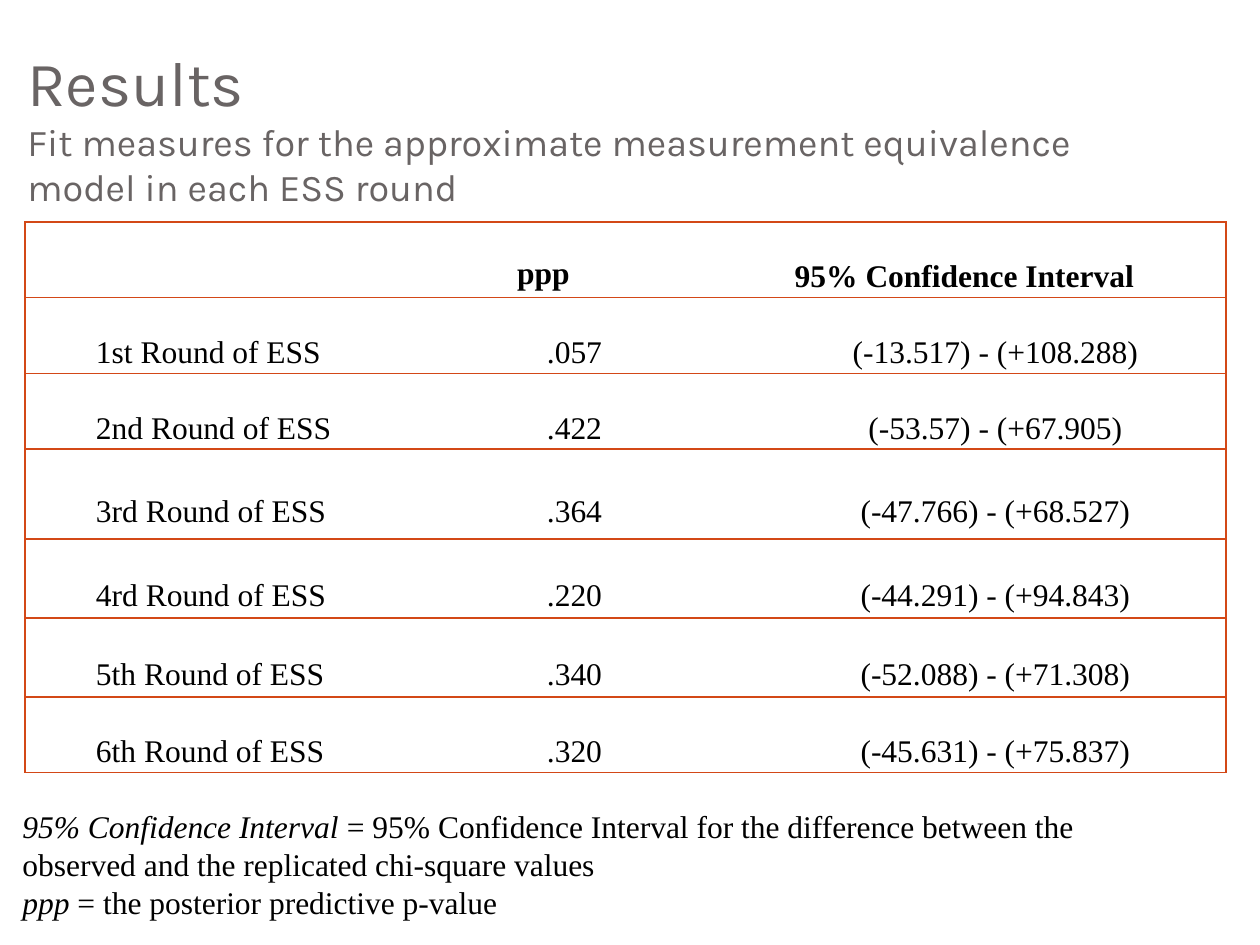
import pptx
import pptx.dml.color
import pptx.enum.text
import pptx.oxml.ns
import pptx.util
from lxml import etree

PX = 914400 / 126
BLACK = pptx.dml.color.RGBColor(0x00, 0x00, 0x00)
WHITE = pptx.dml.color.RGBColor(0xFF, 0xFF, 0xFF)
GREY = pptx.dml.color.RGBColor(0x69, 0x64, 0x64)
ORANGE = pptx.dml.color.RGBColor(0xD3, 0x48, 0x17)
SERIF = "Times New Roman"
CENTER = pptx.enum.text.PP_ALIGN.CENTER
LEFT = pptx.enum.text.PP_ALIGN.LEFT

HEADER = ("", "ppp", "95% Confidence Interval")
ROUNDS = [
    ("1st Round of ESS", ".057", "(-13.517) - (+108.288)"),
    ("2nd Round of ESS", ".422", "(-53.57) - (+67.905)"),
    ("3rd Round of ESS", ".364", "(-47.766) - (+68.527)"),
    ("4rd Round of ESS", ".220", "(-44.291) - (+94.843)"),
    ("5th Round of ESS", ".340", "(-52.088) - (+71.308)"),
    ("6th Round of ESS", ".320", "(-45.631) - (+75.837)"),
]
COLUMN_WIDTHS = (359, 319, 523)
ROW_HEIGHTS = (73, 73, 73, 90, 79, 79, 73)
NOTES = [
    ("95% Confidence Interval ",
     "= 95% Confidence Interval for the difference between the observed "
     "and the replicated chi-square values"),
    ("ppp ", "= the posterior predictive p-value"),
]


def px(length):
    return pptx.util.Emu(round(length * PX))


def style_font(font, name, size, color, bold=False):
    font.name = name
    font.size = pptx.util.Pt(size)
    font.color.rgb = color
    font.bold = bold


def add_text_frame(page, left, top, width, height):
    box = page.shapes.add_textbox(px(left), px(top), px(width), px(height))
    box.text_frame.word_wrap = True
    return box.text_frame


def add_paragraphs(frame, count):
    """Return the frame's first paragraph and as many new ones as needed."""
    return [frame.paragraphs[0]] + [frame.add_paragraph() for _ in range(count - 1)]


def add_title(page):
    frame = add_text_frame(page, 15, 37, 1153, 170)
    lines = [
        ("Results", 36),
        ("Fit measures for the approximate measurement equivalence "
         "model in each ESS round", 21.6),
    ]
    for para, (text, size) in zip(add_paragraphs(frame, len(lines)), lines):
        para.text = text
        style_font(para.font, "Karla", size, GREY)


def set_borders(cell, visible):
    """Draw the sides named in visible (letters of LRTB) and clear the others."""
    properties = cell._tc.get_or_add_tcPr()
    for side in "LRTB":
        line = etree.SubElement(properties, pptx.oxml.ns.qn(f"a:ln{side}"),
                                w=str(pptx.util.Pt(1)))
        if side in visible:
            fill = etree.SubElement(line, pptx.oxml.ns.qn("a:solidFill"))
            etree.SubElement(fill, pptx.oxml.ns.qn("a:srgbClr"), val=str(ORANGE))
        else:
            etree.SubElement(line, pptx.oxml.ns.qn("a:noFill"))


def fill_cell(cell, text, alignment, is_header):
    cell.margin_left = cell.margin_right = px(9)
    cell.margin_top = cell.margin_bottom = 0
    cell.vertical_anchor = pptx.enum.text.MSO_ANCHOR.MIDDLE
    cell.fill.solid()
    cell.fill.fore_color.rgb = WHITE
    para = cell.text_frame.paragraphs[0]
    para.text = text
    para.alignment = alignment
    para.line_spacing = 2.0
    style_font(para.font, SERIF, 18, BLACK, bold=is_header)
    if not is_header:
        para._p.get_or_add_pPr().set("indent", str(px(62)))


def add_fit_table(page):
    rows = [HEADER] + ROUNDS
    table = page.shapes.add_table(
        len(rows), len(HEADER), px(25), px(222),
        px(sum(COLUMN_WIDTHS)), px(sum(ROW_HEIGHTS))).table
    table.first_row = table.horz_banding = False
    for column, width in zip(table.columns, COLUMN_WIDTHS):
        column.width = px(width)
    for row, height in zip(table.rows, ROW_HEIGHTS):
        row.height = px(height)
    for row_index, texts in enumerate(rows):
        for column_index, text in enumerate(texts):
            cell = table.cell(row_index, column_index)
            set_borders(cell, ("LTB", "TB", "RTB")[column_index])
            fill_cell(cell, text, CENTER if column_index else LEFT, row_index == 0)
    table.cell(0, 1).vertical_anchor = pptx.enum.text.MSO_ANCHOR.TOP


def add_notes(page):
    frame = add_text_frame(page, 10, 801, 1096, 127)
    for para, (term, meaning) in zip(add_paragraphs(frame, len(NOTES)), NOTES):
        style_font(para.font, SERIF, 18, BLACK)
        for text, italic in ((term, True), (meaning, False)):
            span = para.add_run()
            span.text = text
            span.font.italic = italic


def main():
    deck = pptx.Presentation()
    deck.slide_width, deck.slide_height = px(1260), px(945)
    page = deck.slides.add_slide(deck.slide_layouts[6])
    add_title(page)
    add_fit_table(page)
    add_notes(page)
    deck.save("out.pptx")


if __name__ == "__main__":
    main()
